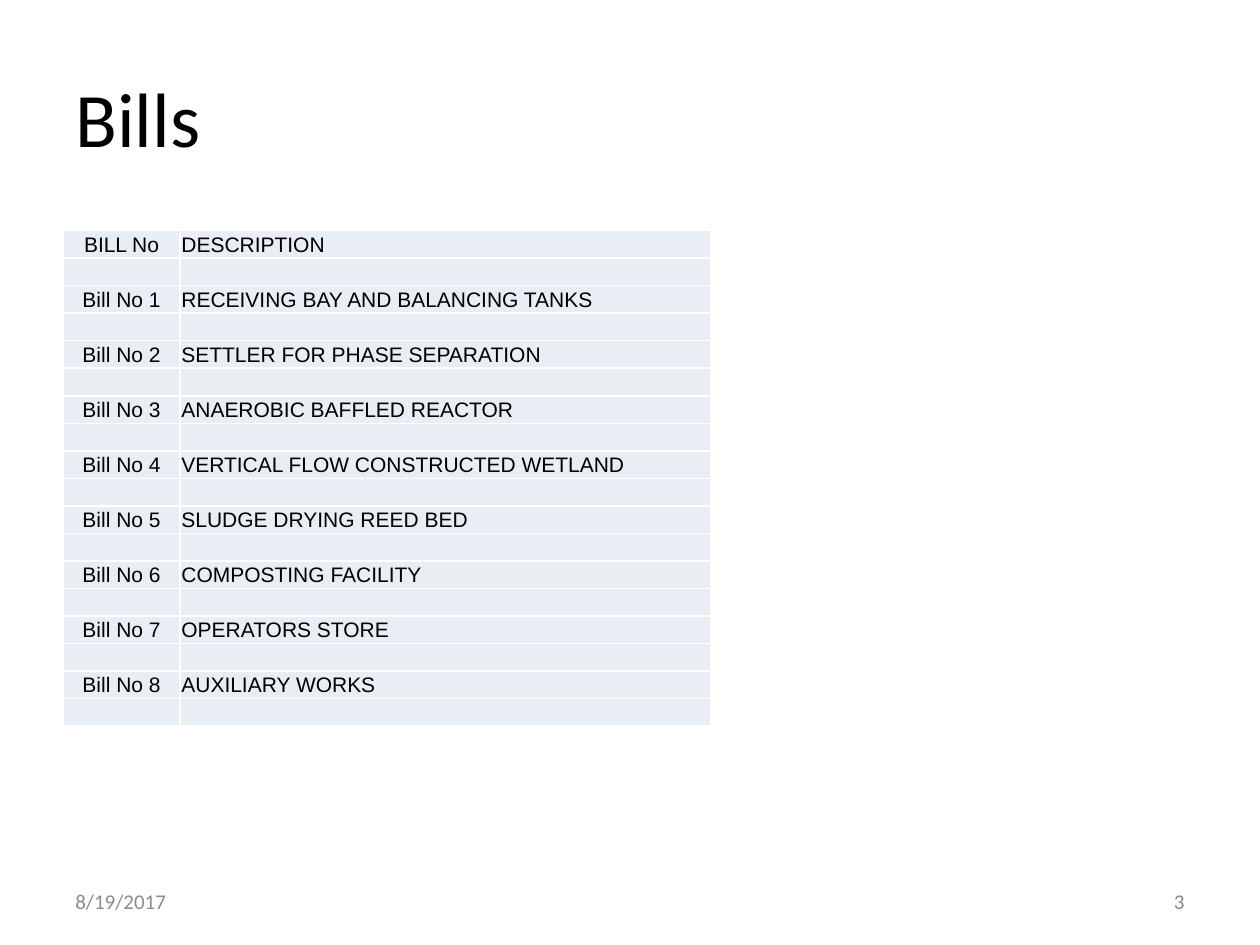
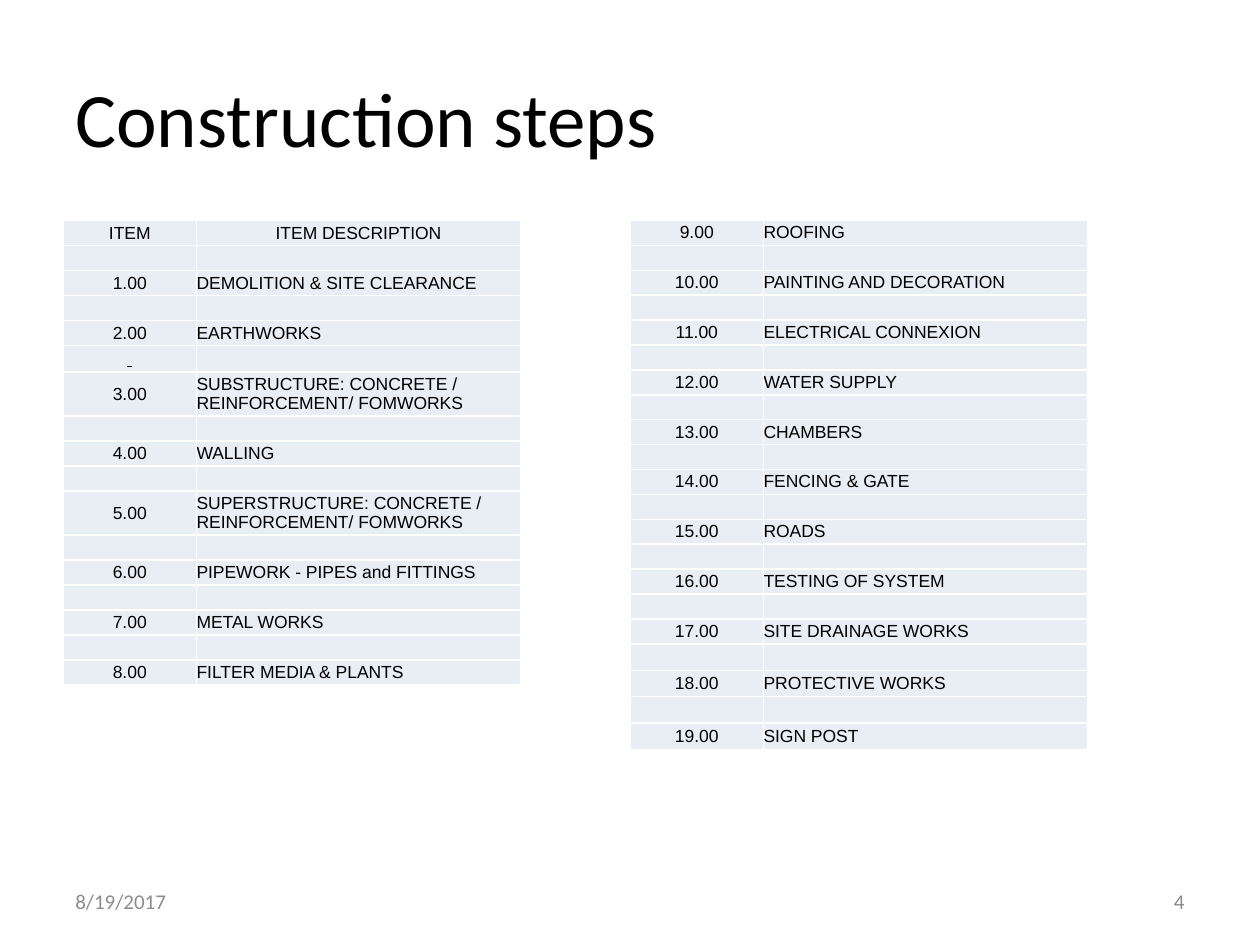
from lxml import etree
from pptx import Presentation
from pptx.dml.color import RGBColor
from pptx.enum import text
from pptx.oxml import ns
from pptx.util import Inches, Pt

COLORS = {"ink": "000000", "date": "8C8C8C", "number": "898989",
          "cell": "E9EDF4", "rule": "FFFFFF"}
LEFT, CENTER, RIGHT = text.PP_ALIGN.LEFT, text.PP_ALIGN.CENTER, text.PP_ALIGN.RIGHT
WIDTH, HEIGHT, MARGIN = 10, 7.5, 0.5
FOOTER_TOP, FOOTER_WIDTH, FOOTER_HEIGHT = 6.95, 2.33, 0.4
DATE = "8/19/2017"

BILLS = ["RECEIVING BAY AND BALANCING TANKS", "SETTLER FOR PHASE SEPARATION",
         "ANAEROBIC BAFFLED REACTOR", "VERTICAL FLOW CONSTRUCTED WETLAND",
         "SLUDGE DRYING REED BED", "COMPOSTING FACILITY", "OPERATORS STORE",
         "AUXILIARY WORKS"]
STEPS = ["DEMOLITION & SITE CLEARANCE", "EARTHWORKS",
         "SUBSTRUCTURE: CONCRETE / REINFORCEMENT/ FOMWORKS", "WALLING",
         "SUPERSTRUCTURE: CONCRETE / REINFORCEMENT/ FOMWORKS",
         "PIPEWORK - PIPES and FITTINGS", "METAL WORKS", "FILTER MEDIA & PLANTS",
         "ROOFING", "PAINTING AND DECORATION", "ELECTRICAL CONNEXION",
         "WATER SUPPLY", "CHAMBERS", "FENCING & GATE", "ROADS",
         "TESTING OF SYSTEM", "SITE DRAINAGE WORKS", "PROTECTIVE WORKS", "SIGN POST"]
FIRST_COLUMN = 8

bill_rows = [("BILL No", "DESCRIPTION")]
bill_rows += [(f"Bill No {n}", bill) for n, bill in enumerate(BILLS, 1)]
step_rows = [("ITEM", "ITEM DESCRIPTION")]
step_rows += [(f"{n}.00", step) for n, step in enumerate(STEPS, 1)]

BILL_STYLE = {"columns": (0.93, 4.21), "size": 12, "inset": 0.01}
STEP_STYLE = {"columns": (1.06, 2.57), "size": 10, "inset": 0}
SLIDES = [
    {"title": "Bills", "number": 3, "tables": [
        {"rows": bill_rows, "at": (MARGIN, 1.83), "height": 3.94,
         "end_gap": True, **BILL_STYLE}]},
    {"title": "Construction steps", "number": 4, "tables": [
        {"rows": step_rows[:FIRST_COLUMN + 1], "at": (MARGIN, 1.75), "height": 3.69,
         "tall": {5: 0.21, 6: 0.35, 10: 0.35}, "centered": (0, 1),
         "underlined": (5, 0), **STEP_STYLE},
        {"rows": step_rows[FIRST_COLUMN + 1:], "at": (WIDTH / 2, 1.75), "height": 4.2,
         "tall": dict.fromkeys(range(17, 21), 0.21), **STEP_STYLE}]},
]


def rgb(name):
    return RGBColor.from_string(COLORS[name])


def write(paragraph, words, size, font, color, align):
    paragraph.text = words
    paragraph.alignment = align
    for run in paragraph.runs:
        run.font.size, run.font.name = Pt(size), font
        run.font.color.rgb = rgb(color)


def add_label(slide, words, box, size, color, align=LEFT):
    frame = slide.shapes.add_textbox(*map(Inches, box)).text_frame
    frame.word_wrap = True
    frame.vertical_anchor = text.MSO_ANCHOR.MIDDLE
    write(frame.paragraphs[0], words, size, "Calibri", color, align)


def rule_cell(cell):
    properties = cell._tc.get_or_add_tcPr()
    for side in ("lnL", "lnR", "lnT", "lnB"):
        line = etree.SubElement(properties, ns.qn(f"a:{side}"), w=str(Pt(1)))
        fill = etree.SubElement(line, ns.qn("a:solidFill"))
        etree.SubElement(fill, ns.qn("a:srgbClr"), val=COLORS["rule"])


def fill_cell(cell, words, size, inset, align):
    rule_cell(cell)
    cell.fill.solid()
    cell.fill.fore_color.rgb = rgb("cell")
    cell.vertical_anchor = text.MSO_ANCHOR.MIDDLE
    cell.margin_left = cell.margin_right = cell.margin_top = Inches(inset)
    cell.margin_bottom = 0
    paragraph = cell.text_frame.paragraphs[0]
    write(paragraph, words, size, "Arial", "ink", align)
    if not words:
        etree.SubElement(paragraph._p, ns.qn("a:endParaRPr"), sz=str(size * 100))


def add_schedule(slide, schedule):
    lines = [line for row in schedule["rows"] for line in (row, ("", ""))]
    if not schedule.get("end_gap"):
        lines.pop()
    columns, tall = schedule["columns"], schedule.get("tall", {})
    regular = (schedule["height"] - sum(tall.values())) / (len(lines) - len(tall))
    box = (*schedule["at"], sum(columns), schedule["height"])
    grid = slide.shapes.add_table(len(lines), len(columns), *map(Inches, box)).table
    grid.first_row = grid.horz_banding = False
    for column, width in zip(grid.columns, columns):
        column.width = Inches(width)
    for r, line in enumerate(lines):
        grid.rows[r].height = Inches(tall.get(r, regular))
        for c, words in enumerate(line):
            centered = c == 0 or (r, c) == schedule.get("centered")
            underlined = (r, c) == schedule.get("underlined")
            fill_cell(grid.cell(r, c), " " if underlined else words, schedule["size"],
                      schedule["inset"], CENTER if centered else LEFT)
            if underlined:
                grid.cell(r, c).text_frame.paragraphs[0].runs[0].font.underline = True


def main():
    deck = Presentation()
    deck.slide_width, deck.slide_height = Inches(WIDTH), Inches(HEIGHT)
    for content in SLIDES:
        slide = deck.slides.add_slide(deck.slide_layouts[6])
        add_label(slide, content["title"], (MARGIN, 0.3, WIDTH - 2 * MARGIN, 1.25),
                  44, "ink")
        footer = (FOOTER_TOP, FOOTER_WIDTH, FOOTER_HEIGHT)
        add_label(slide, DATE, (MARGIN, *footer), 12, "date")
        add_label(slide, str(content["number"]),
                  (WIDTH - MARGIN - FOOTER_WIDTH, *footer), 12, "number", RIGHT)
        for schedule in content["tables"]:
            add_schedule(slide, schedule)
    deck.save("out.pptx")


if __name__ == "__main__":
    main()
